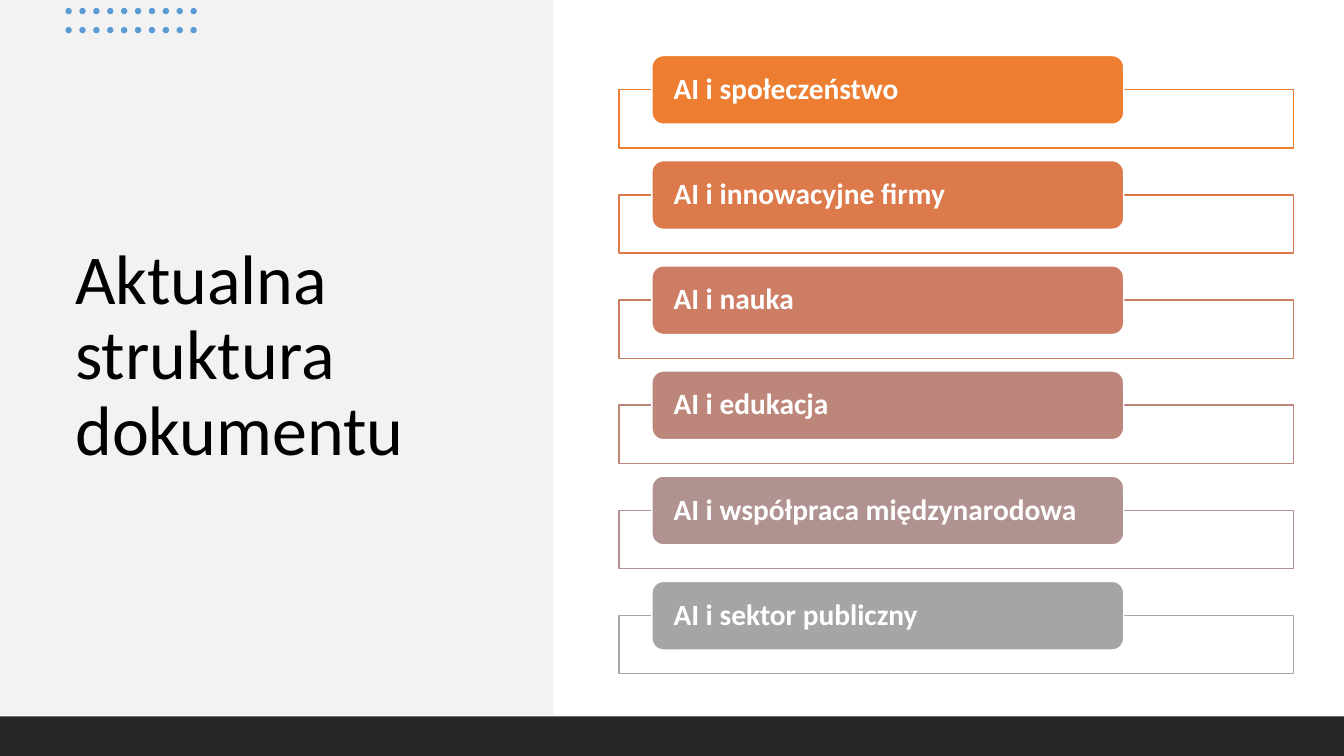
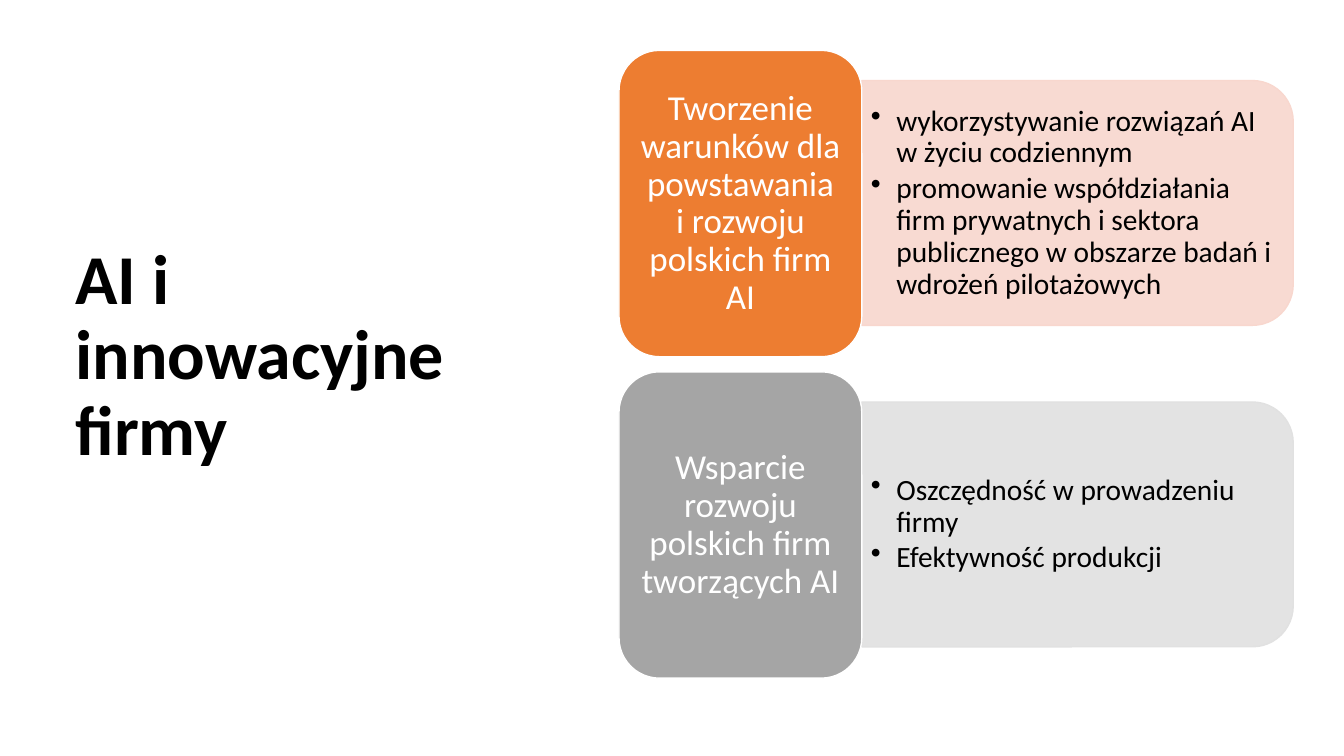
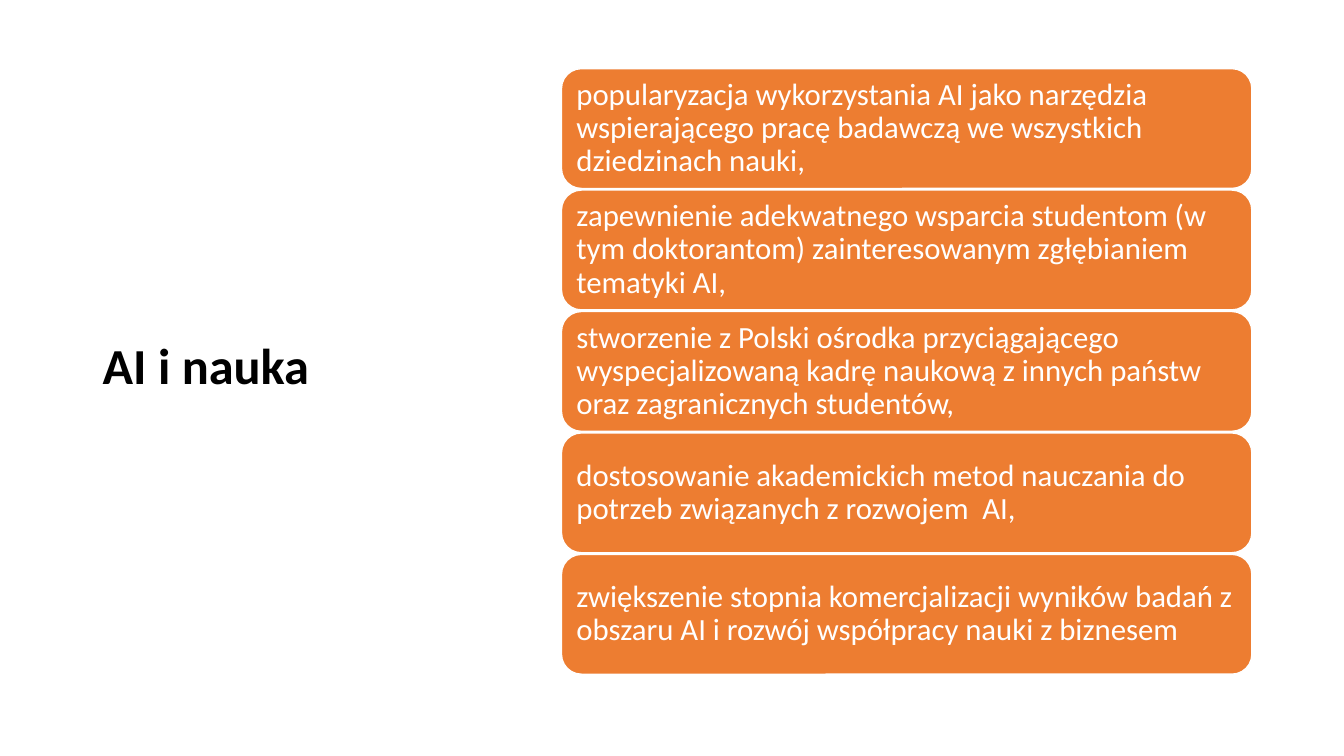
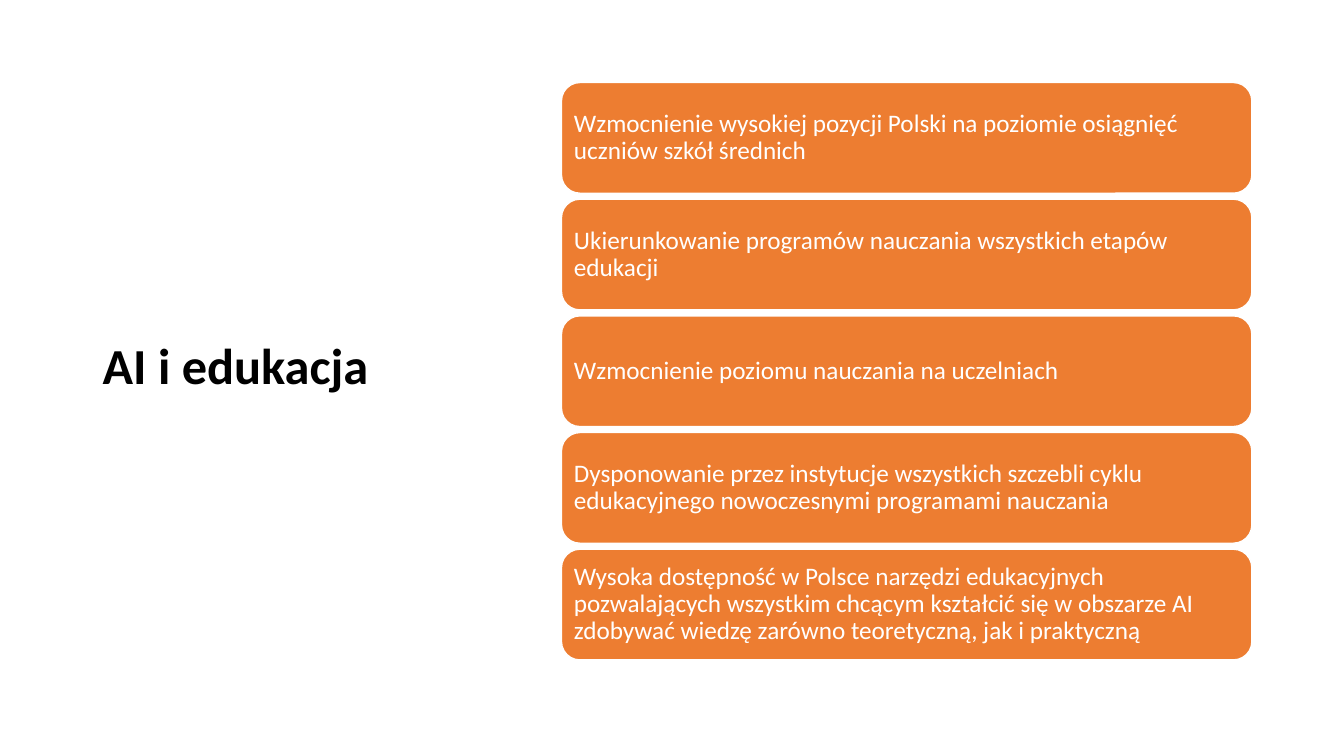
"""Build four slides on the structure of a Polish AI policy document."""
from lxml import etree
from pptx import Presentation
from pptx import util as u
from pptx.dml import color
from pptx.enum import shapes, text
from pptx.oxml import ns

COLORS = {
    "black": "000000", "white": "FFFFFF", "side": "F2F2F2", "band": "262626",
    "dot": "5B9BD5", "orange": "ED7D31", "copper": "DC7A4B", "clay": "CC7D64",
    "rose": "BD867B", "mauve": "B09391", "gray": "A5A5A5",
    "pale_orange": "F8D7CE", "pale_gray": "E1E1E1",
}
FONT = "Calibri"
RECT = shapes.MSO_SHAPE.RECTANGLE
ROUNDED = shapes.MSO_SHAPE.ROUNDED_RECTANGLE
HALF_ROUNDED = shapes.MSO_SHAPE.ROUND_2_SAME_RECTANGLE
LEFT, CENTER = text.PP_ALIGN.LEFT, text.PP_ALIGN.CENTER


def draw(slide, kind, place, fill, line=None, opacity=100):
    shape = slide.shapes.add_shape(kind, *map(u.Cm, place))
    shape.shadow.inherit = False
    shape.fill.solid()
    shape.fill.fore_color.rgb = color.RGBColor.from_string(COLORS[fill])
    if line:
        shape.line.width = u.Pt(1)
        shape.line.color.rgb = color.RGBColor.from_string(COLORS[line])
    else:
        shape.line.fill.background()
    if opacity < 100:
        tint = shape.fill._xPr.find(ns.qn("a:solidFill"))[0]
        etree.SubElement(tint, ns.qn("a:alpha"), val=str(opacity * 1000))
    return shape


def write(shape, lines, size, ink, bold=False, align=LEFT, margins=(0.25, 0.13), bullets=False):
    frame = shape.text_frame
    frame.word_wrap = True
    frame.vertical_anchor = text.MSO_ANCHOR.MIDDLE
    frame.margin_left = frame.margin_right = u.Cm(margins[0])
    frame.margin_top = frame.margin_bottom = u.Cm(margins[1])
    frame.text = "\n".join(lines)
    for paragraph in frame.paragraphs:
        paragraph.alignment = align
        paragraph.line_spacing = 0.9
        if bullets:
            paragraph.space_after = u.Pt(3)
            properties = paragraph._p.get_or_add_pPr()
            properties.set("marL", str(u.Cm(0.64)))
            properties.set("indent", str(-u.Cm(0.64)))
            etree.SubElement(properties, ns.qn("a:buChar"), char="•")
        for run in paragraph.runs:
            run.font.name = FONT
            run.font.size = u.Pt(size)
            run.font.bold = bold
            run.font.color.rgb = color.RGBColor.from_string(COLORS[ink])


deck = Presentation()
deck.slide_width, deck.slide_height = u.Cm(33.87), u.Cm(19.05)
structure, firms, science, education = [
    deck.slides.add_slide(deck.slide_layouts[6]) for _ in range(4)
]

draw(structure, RECT, (0, 0, 13.95, 18.03), "side")
draw(structure, RECT, (0, 18.05, 33.87, 1), "band")
for column in range(10):
    for row in range(2):
        draw(structure, shapes.MSO_SHAPE.OVAL,
             (1.65 + 0.35 * column, 0.2 + 0.48 * row, 0.16, 0.16), "dot")

WIDE_TITLE = (1.65, 3.35, 10.77, 11.3)
NARROW_TITLE = (2.34, 1.55, 9.37, 15.47)
for slide, title, place, size, bold in [
    (structure, "Aktualna struktura dokumentu", WIDE_TITLE, 50, False),
    (firms, "AI i innowacyjne firmy", WIDE_TITLE, 50, True),
    (science, "AI i nauka", NARROW_TITLE, 36, True),
    (education, "AI i edukacja", NARROW_TITLE, 36, True),
]:
    write(slide.shapes.add_textbox(*map(u.Cm, place)), [title], size, "black", bold)

for row, (chapter, shade) in enumerate([
    ("AI i społeczeństwo", "orange"),
    ("AI i innowacyjne firmy", "copper"),
    ("AI i nauka", "clay"),
    ("AI i edukacja", "rose"),
    ("AI i współpraca międzynarodowa", "mauve"),
    ("AI i sektor publiczny", "gray"),
]):
    shift = 2.65 * row
    draw(structure, RECT, (15.6, 2.26 + shift, 17, 1.47), "white", shade, 90)
    tab = draw(structure, ROUNDED, (16.43, 1.4 + shift, 11.89, 1.73), shade, "white")
    write(tab, [chapter], 21, "white", True, margins=(0.46, 0))

for row, (goal, shade, pale, actions) in enumerate([
    ("Tworzenie warunków dla powstawania i rozwoju polskich firm AI", "orange", "pale_orange",
     ["wykorzystywanie rozwiązań AI w życiu codziennym",
      "promowanie współdziałania firm prywatnych i sektora publicznego "
      "w obszarze badań i wdrożeń pilotażowych"]),
    ("Wsparcie rozwoju polskich firm tworzących AI", "gray", "pale_gray",
     ["Oszczędność w prowadzeniu firmy", "Efektywność produkcji"]),
]):
    shift = 8.1 * row
    panel = draw(firms, HALF_ROUNDED, (24.07, -0.32 + shift, 6.17, 10.87), pale, pale, 90)
    panel.rotation = 90
    details = firms.shapes.add_textbox(*map(u.Cm, (21.72, 2.34 + shift, 10.57, 5.56)))
    write(details, actions, 21, "black", margins=(0.23, 0.1), bullets=True)
    head = draw(firms, ROUNDED, (15.6, 1.27 + shift, 6.12, 7.72), shade, "white")
    write(head, [goal], 25, "white", align=CENTER)

for slide, top, height, step, size, margin, goals in [
    (science, 1.73, 3.02, 3.06, 22, 0.23, [
        "popularyzacja wykorzystania AI jako narzędzia wspierającego pracę badawczą "
        "we wszystkich dziedzinach nauki,",
        "zapewnienie adekwatnego wsparcia studentom (w tym doktorantom) "
        "zainteresowanym zgłębianiem tematyki AI,",
        "stworzenie z Polski ośrodka przyciągającego wyspecjalizowaną kadrę naukową "
        "z innych państw oraz zagranicznych studentów,",
        "dostosowanie akademickich metod nauczania do potrzeb związanych z rozwojem  AI,",
        "zwiększenie stopnia komercjalizacji wyników badań z obszaru AI "
        "i rozwój współpracy nauki z biznesem",
    ]),
    (education, 2.08, 2.79, 2.94, 18, 0.18, [
        "Wzmocnienie wysokiej pozycji Polski na poziomie osiągnięć uczniów szkół średnich",
        "Ukierunkowanie programów nauczania wszystkich etapów edukacji",
        "Wzmocnienie poziomu nauczania na uczelniach",
        "Dysponowanie przez instytucje wszystkich szczebli cyklu edukacyjnego "
        "nowoczesnymi programami nauczania",
        "Wysoka dostępność w Polsce narzędzi edukacyjnych pozwalających wszystkim chcącym "
        "kształcić się w obszarze AI zdobywać wiedzę zarówno teoretyczną, jak i praktyczną",
    ]),
]:
    for row, goal in enumerate(goals):
        card = draw(slide, ROUNDED, (14.15, top + step * row, 17.4, height), "orange", "white")
        write(card, [goal], size, "white", margins=(margin, margin))

deck.save("out.pptx")
